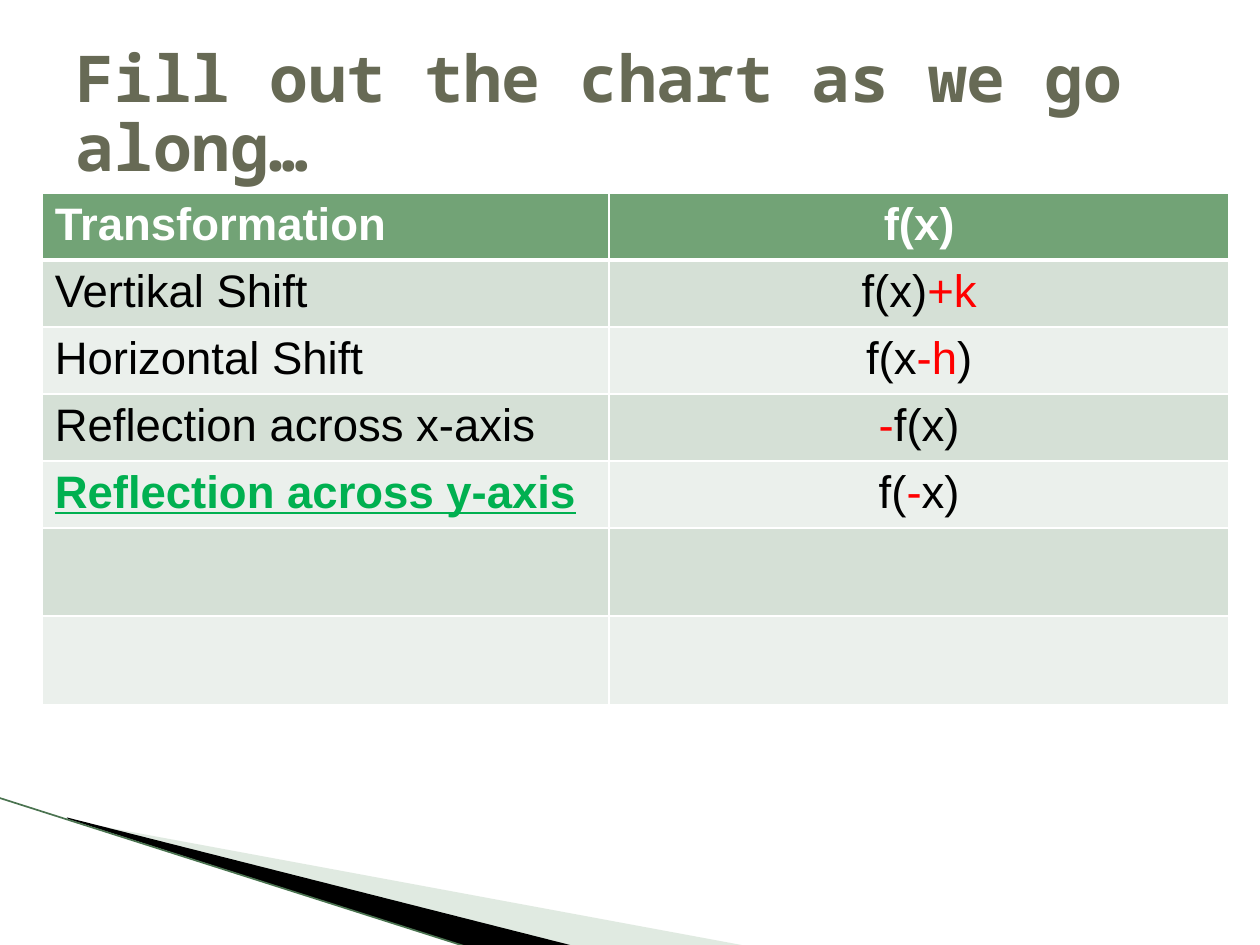
from lxml.etree import SubElement
from pptx import Presentation
from pptx.dml.color import RGBColor
from pptx.enum.shapes import MSO_CONNECTOR
from pptx.enum.text import MSO_ANCHOR, MSO_AUTO_SIZE, PP_ALIGN
from pptx.oxml.ns import qn
from pptx.util import Cm, Pt

WHITE, BLACK, RED, GREEN = "FFFFFF", "000000", "FF0000", "00B050"
HEADER, BANDS = "72A376", ("D5E0D6", "EBF0EC")

# Each cell is a list of (text, colour) runs
ROWS = [
    ([("Transformation", WHITE)], [("f(x)", WHITE)]),
    ([("Vertikal Shift", BLACK)], [("f(x)", BLACK), ("+k", RED)]),
    ([("Horizontal Shift", BLACK)], [("f(x", BLACK), ("-h", RED), (")", BLACK)]),
    ([("Reflection across x-axis", BLACK)], [("-", RED), ("f(x)", BLACK)]),
    ([("Reflection across y-axis", GREEN)], [("f(", BLACK), ("-", RED), ("x)", BLACK)]),
    ([], []),
    ([], []),
]


def colour(value):
    return RGBColor.from_string(value)


def add_run(paragraph, text, font_name, size, text_colour, bold=False, underline=False):
    run = paragraph.add_run()
    run.text = text
    font = run.font
    font.name, font.size = font_name, Pt(size)
    font.bold, font.underline = bold, underline
    font.color.rgb = colour(text_colour)


def add_wedge(slide, points, fill, opacity=100):
    """Filled outline; points are in hundredths of a centimetre."""
    builder = slide.shapes.build_freeform(*points[0], scale=Cm(0.01))
    builder.add_line_segments(points[1:], close=True)
    shape = builder.convert_to_shape()
    shape.shadow.inherit = False
    shape.fill.solid()
    shape.fill.fore_color.rgb = colour(fill)
    shape.line.fill.background()
    if opacity < 100:
        fill_colour = shape.fill._xPr.find(qn("a:solidFill"))[0]
        SubElement(fill_colour, qn("a:alpha"), val=str(opacity * 1000))


def add_decoration(slide):
    add_wedge(slide, [(140, 1654), (1511, 1908), (1158, 1908), (140, 1651)], "B3CBB5", 40)
    add_wedge(slide, [(135, 1648), (1161, 1908), (945, 1910), (137, 1651)], BLACK)
    line = slide.shapes.add_connector(
        MSO_CONNECTOR.STRAIGHT, Cm(-0.03), Cm(16.08), Cm(9.45), Cm(19.1))
    line.line.color.rgb = colour("4A7350")
    line.line.width = Pt(0.95)
    SubElement(line._element.spPr, qn("a:effectLst"))


def set_borders(cell, top=1, bottom=1):
    properties = cell._tc.get_or_add_tcPr()
    for side, width in (("L", 1), ("R", 1), ("T", top), ("B", bottom)):
        border = SubElement(properties, qn(f"a:ln{side}"), w=str(Pt(width)))
        fill = SubElement(border, qn("a:solidFill"))
        SubElement(fill, qn("a:srgbClr"), val=WHITE)


def add_table(slide):
    table = slide.shapes.add_table(
        len(ROWS), 2, Cm(0.85), Cm(3.89), Cm(23.93), Cm(10.34)).table
    for column, width in zip(table.columns, (11.43, 12.5)):
        column.width = Cm(width)
    for row_index, cells in enumerate(ROWS):
        is_header = row_index == 0
        table.rows[row_index].height = Cm(1.35 if cells[0] else 1.78)
        for column_index, runs in enumerate(cells):
            cell = table.cell(row_index, column_index)
            set_borders(cell, top=3 if row_index == 1 else 1, bottom=3 if is_header else 1)
            cell.fill.solid()
            cell.fill.fore_color.rgb = colour(HEADER if is_header else BANDS[(row_index - 1) % 2])
            paragraph = cell.text_frame.paragraphs[0]
            paragraph.alignment = PP_ALIGN.CENTER if column_index else PP_ALIGN.LEFT
            for text, text_colour in runs:
                highlighted = text_colour == GREEN
                add_run(paragraph, text, "Arial", 26, text_colour,
                        bold=is_header or highlighted, underline=highlighted)


def format_title(slide):
    title = slide.shapes.title
    title.left, title.top, title.width, title.height = Cm(1.27), Cm(0.76), Cm(22.86), Cm(3.18)
    frame = title.text_frame
    frame.word_wrap = True
    frame.auto_size = MSO_AUTO_SIZE.NONE
    frame.vertical_anchor = MSO_ANCHOR.MIDDLE
    paragraph = frame.paragraphs[0]
    paragraph.alignment = PP_ALIGN.LEFT
    paragraph.line_spacing = 0.88
    add_run(paragraph, "Fill out the chart as we go along…",
            "Noto Sans Mono", 36.9, "676A55", bold=True)
    # The title lies in front of the table
    slide.shapes._spTree.append(title._element)


def main():
    presentation = Presentation()
    presentation.slide_width, presentation.slide_height = Cm(25.4), Cm(19.05)
    slide = presentation.slides.add_slide(presentation.slide_layouts[5])
    add_decoration(slide)
    add_table(slide)
    format_title(slide)
    presentation.save("out.pptx")


if __name__ == "__main__":
    main()
